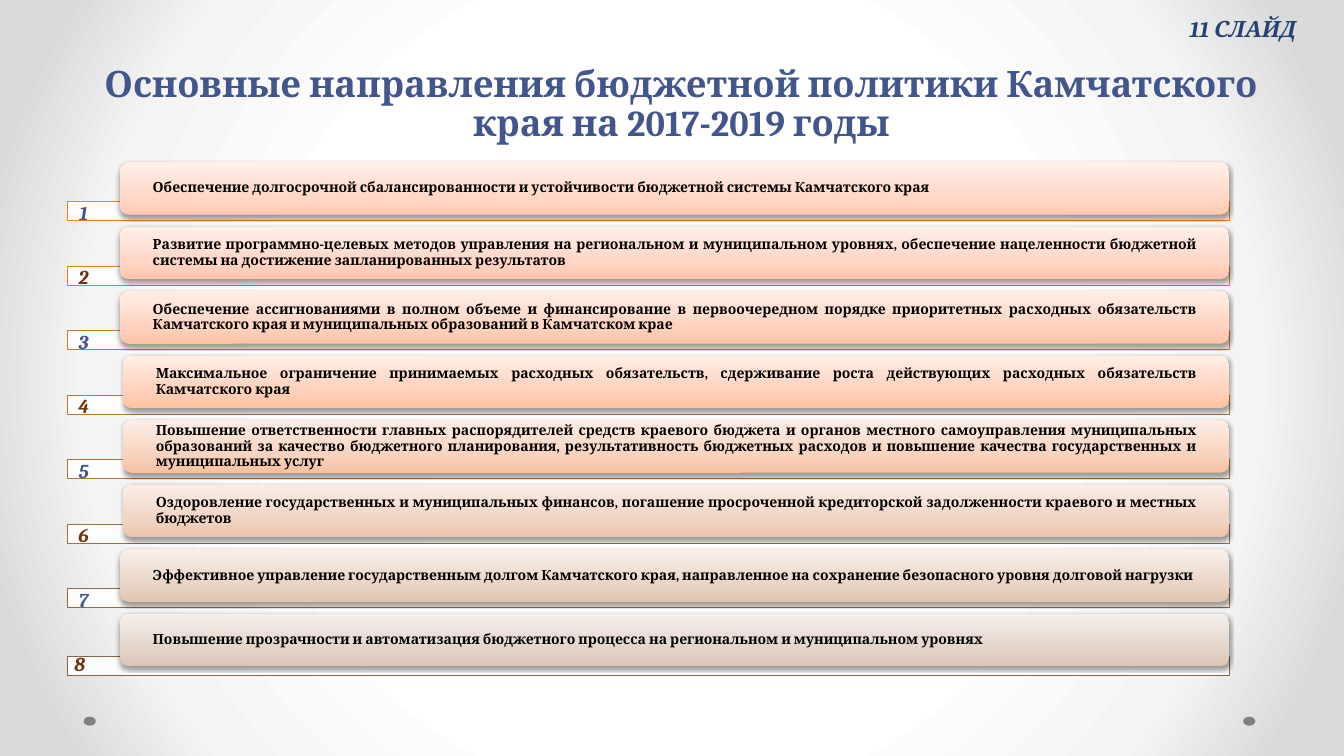
from pptx import Presentation
from pptx.dml.color import RGBColor
from pptx.enum.shapes import MSO_SHAPE
from pptx.enum.text import MSO_ANCHOR, PP_ALIGN
from pptx.oxml import parse_xml
from pptx.oxml.ns import nsdecls, qn
from pptx.util import Inches, Pt

PAGE_LABEL = "11 СЛАЙД"
TITLE = "Основные направления бюджетной политики Камчатского края на 2017-2019 годы"

# Text, strip outline, bar gradient from bottom to top
DIRECTIONS = [
    ("Обеспечение долгосрочной сбалансированности и устойчивости бюджетной системы Камчатского края",
     "E68422", ("FFC9B1", "FFD8C8", "FFF0EA")),
    ("Развитие программно-целевых методов управления на региональном и муниципальном уровнях, "
     "обеспечение нацеленности бюджетной системы на достижение запланированных результатов",
     "DC8023", ("FFC6AD", "FFD6C5", "FFEFE9")),
    ("Обеспечение ассигнованиями в полном объеме и финансирование в первоочередном порядке "
     "приоритетных расходных обязательств Камчатского края и муниципальных образований в Камчатском крае",
     "CC7B2B", ("FFC3A6", "FFD4C0", "FFEEE7")),
    ("Максимальное ограничение принимаемых расходных обязательств, сдерживание роста действующих "
     "расходных обязательств Камчатского края",
     "BC7732", ("FFC1A0", "FFD2BC", "FFEEE6")),
    ("Повышение ответственности главных распорядителей средств краевого бюджета и органов местного "
     "самоуправления муниципальных образований за качество бюджетного планирования, результативность "
     "бюджетных расходов и повышение качества государственных и муниципальных услуг",
     "AD7338", ("F7C1A3", "F8D3BF", "FDEEE6")),
    ("Оздоровление государственных и муниципальных финансов, погашение просроченной кредиторской "
     "задолженности краевого и местных бюджетов",
     "9F6F3E", ("ECC3AA", "F1D4C4", "FAEEE8")),
    ("Эффективное управление государственным долгом Камчатского края, направленное на сохранение "
     "безопасного уровня долговой нагрузки",
     "916A43", ("E3C4AF", "EAD5C8", "F8EFE9")),
    ("Повышение прозрачности и автоматизация бюджетного процесса на региональном и муниципальном уровнях",
     "846648", ("DAC4B4", "E4D5CB", "F5EFEB")),
]

FONT = "Cambria"
BLACK = RGBColor(0x00, 0x00, 0x00)
WHITE = RGBColor(0xFF, 0xFF, 0xFF)
GREY = RGBColor(0x80, 0x80, 0x80)
BLUE = RGBColor(0x42, 0x56, 0x8D)
NAVY = RGBColor(0x23, 0x42, 0x71)
BROWN = RGBColor(0x72, 0x30, 0x08)

BACKGROUND_STOPS = [(50, "FFFFFF"), (76, "F4F4F4"), (92, "DADADA")]
BAR_POSITIONS = (0, 35, 100)

ROW_PITCH = 0.64
BAR_TOP, STRIP_TOP, NUMBER_TOP = 1.61, 2.0, 1.94
STRIP_LEFT, RIGHT_EDGE = 0.67, 12.19
BAR_LEFT, INDENTED_BAR_LEFT = 1.19, 1.22
INDENTED_ROWS = (3, 4, 5)
BAR_HEIGHT, STRIP_HEIGHT = 0.52, 0.19
LAST_STRIP_DROP = 0.03


def set_gradient(fill, parent, stops, direction):
    """Give the fill any number of stops; direction is its a:lin or a:path XML."""
    fill.gradient()
    stop_xml = "".join(
        f'<a:gs pos="{position * 1000}"><a:srgbClr val="{color}"/></a:gs>'
        for position, color in stops)
    default = parent.find(".//" + qn("a:gradFill"))
    default.getparent().replace(default, parse_xml(
        f'<a:gradFill {nsdecls("a")} rotWithShape="1">'
        f"<a:gsLst>{stop_xml}</a:gsLst>{direction}</a:gradFill>"))


def add_plain_shape(slide, kind, left, top, width, height):
    shape = slide.shapes.add_shape(
        kind, Inches(left), Inches(top), Inches(width), Inches(height))
    shape.shadow.inherit = False
    shape.line.fill.background()
    return shape


def write(frame, text, size, color, alignment, italic=False):
    paragraph = frame.paragraphs[0]
    paragraph.alignment = alignment
    run = paragraph.add_run()
    run.text = text
    run.font.name = FONT
    run.font.size = Pt(size)
    run.font.bold = True
    run.font.italic = italic
    run.font.color.rgb = color
    return paragraph


def add_text(slide, box, *style, wrap=True, **options):
    frame = slide.shapes.add_textbox(*map(Inches, box)).text_frame
    frame.word_wrap = wrap
    return frame, write(frame, *style, **options)


def add_strip(slide, row, line_color):
    drop = LAST_STRIP_DROP if row == len(DIRECTIONS) - 1 else 0
    strip = add_plain_shape(slide, MSO_SHAPE.RECTANGLE, STRIP_LEFT,
                            STRIP_TOP + row * ROW_PITCH + drop,
                            RIGHT_EDGE - STRIP_LEFT, STRIP_HEIGHT)
    strip.fill.solid()
    strip.fill.fore_color.rgb = WHITE
    color = strip._element.spPr.find(qn("a:solidFill"))[0]
    color.append(parse_xml(f'<a:alpha {nsdecls("a")} val="90000"/>'))
    strip.line.color.rgb = RGBColor.from_string(line_color)
    strip.line.width = Pt(0.75)


def add_bar(slide, row, text, colors):
    left = INDENTED_BAR_LEFT if row in INDENTED_ROWS else BAR_LEFT
    bar = add_plain_shape(slide, MSO_SHAPE.ROUNDED_RECTANGLE, left,
                          BAR_TOP + row * ROW_PITCH, RIGHT_EDGE - left, BAR_HEIGHT)
    properties = bar._element.spPr
    set_gradient(bar.fill, properties, zip(BAR_POSITIONS, colors),
                 '<a:lin ang="16200000" scaled="0"/>')
    properties.find(qn("a:effectLst")).append(parse_xml(
        f'<a:outerShdw {nsdecls("a")} blurRad="{Pt(3.1)}" dist="{Pt(1.6)}" '
        'dir="5400000" rotWithShape="0"><a:srgbClr val="000000">'
        '<a:alpha val="38000"/></a:srgbClr></a:outerShdw>'))
    frame = bar.text_frame
    frame.word_wrap = True
    frame.vertical_anchor = MSO_ANCHOR.MIDDLE
    frame.margin_left = frame.margin_right = Inches(0.3)
    frame.margin_top = frame.margin_bottom = 0
    write(frame, text, 10, BLACK, PP_ALIGN.JUSTIFY).line_spacing = 0.9


def add_number(slide, row):
    width = 0.42 if row == len(DIRECTIONS) - 1 else 0.5
    add_text(slide, (0.58, NUMBER_TOP + row * ROW_PITCH, width, 0.34),
             str(row + 1), 14, BROWN if row % 2 else BLUE, PP_ALIGN.CENTER, italic=True)


def main():
    presentation = Presentation()
    presentation.slide_width = Inches(13.33)
    presentation.slide_height = Inches(7.5)
    slide = presentation.slides.add_slide(presentation.slide_layouts[6])
    set_gradient(slide.background.fill, slide._element, BACKGROUND_STOPS,
                 '<a:path path="circle"><a:fillToRect l="50000" t="50000" '
                 'r="50000" b="50000"/></a:path>')

    for dot_left in (0.83, 12.33):
        dot = add_plain_shape(slide, MSO_SHAPE.OVAL, dot_left, 7.11, 0.12, 0.09)
        dot.fill.solid()
        dot.fill.fore_color.rgb = GREY

    frame, paragraph = add_text(slide, (0.66, 0.52, 12.2, 0.96),
                                TITLE, 26, BLUE, PP_ALIGN.CENTER)
    frame.vertical_anchor = MSO_ANCHOR.BOTTOM
    paragraph.line_spacing = 0.9

    for row, (text, line_color, bar_colors) in enumerate(DIRECTIONS):
        add_strip(slide, row, line_color)
        add_bar(slide, row, text, bar_colors)
        add_number(slide, row)

    add_text(slide, (11.7, 0.1, 1.3, 0.37), PAGE_LABEL, 16, NAVY,
             PP_ALIGN.LEFT, wrap=False, italic=True)
    presentation.save("out.pptx")


if __name__ == "__main__":
    main()
